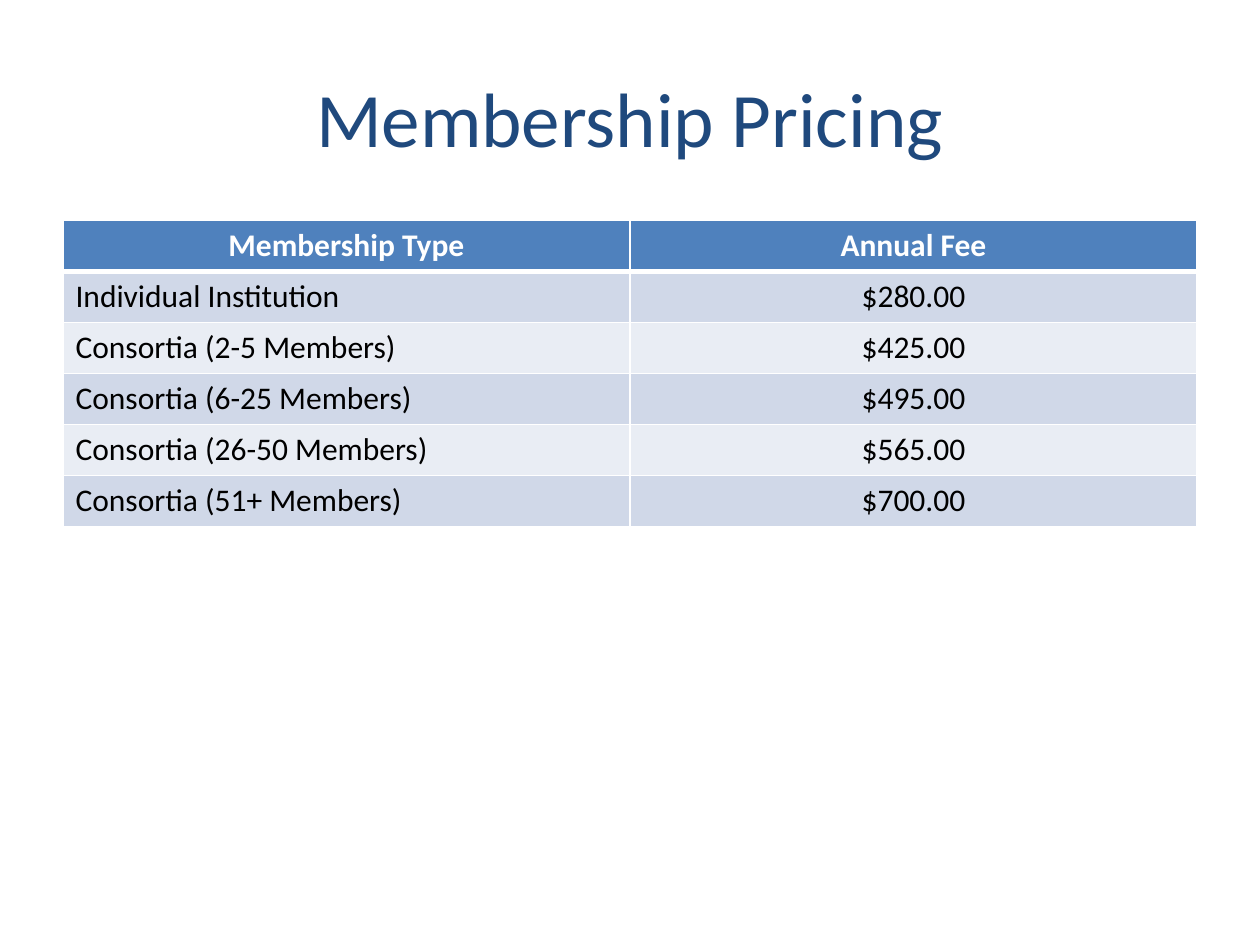
"""Build the membership pricing slide."""
from dataclasses import dataclass

from lxml import etree
from pptx import Presentation
from pptx.dml.color import RGBColor
from pptx.enum.text import MSO_ANCHOR, PP_ALIGN
from pptx.oxml.ns import qn
from pptx.util import Inches, Pt

LEFT, CENTER = PP_ALIGN.LEFT, PP_ALIGN.CENTER
MIDDLE = MSO_ANCHOR.MIDDLE

HEADERS = ("Membership Type", "Annual Fee")
FEES = (
    ("Individual Institution", "$280.00"),
    ("Consortia (2-5 Members)", "$425.00"),
    ("Consortia (6-25 Members)", "$495.00"),
    ("Consortia (26-50 Members)", "$565.00"),
    ("Consortia (51+ Members)", "$700.00"),
)


@dataclass(frozen=True)
class Theme:
    font: str = "Calibri"
    title_size: int = 44
    table_size: int = 18
    title: str = "1F497D"
    header: str = "4F81BD"
    bands: tuple = ("D0D8E8", "E9EDF4")
    white: str = "FFFFFF"
    text: str = "000000"
    thin: int = 1
    thick: int = 3


def write(frame, text, *, font, size, color, bold=False, align=LEFT):
    para = frame.paragraphs[0]
    para.alignment = align
    span = para.add_run()
    span.text = text
    span.font.name = font
    span.font.size = Pt(size)
    span.font.bold = bold
    span.font.color.rgb = RGBColor.from_string(color)


def add_border(cell, side, color, width):
    properties = cell._tc.get_or_add_tcPr()
    line = etree.SubElement(properties, qn(f"a:ln{side}"), w=str(Pt(width)))
    fill = etree.SubElement(line, qn("a:solidFill"))
    etree.SubElement(fill, qn("a:srgbClr"), val=color)


class SlideBuilder:
    def __init__(self, page, theme):
        self.page = page
        self.theme = theme

    def title(self, text, left, top, width, height):
        theme = self.theme
        box = self.page.shapes.add_textbox(
            Inches(left), Inches(top), Inches(width), Inches(height))
        frame = box.text_frame
        frame.word_wrap = True
        frame.vertical_anchor = MIDDLE
        write(frame, text, font=theme.font, size=theme.title_size,
              color=theme.title, align=CENTER)

    def table(self, headers, records, left, top, width, height):
        rows = (headers, *records)
        table = self.page.shapes.add_table(
            len(rows), len(headers), Inches(left), Inches(top),
            Inches(width), Inches(height)).table
        for row, values in enumerate(rows):
            for column, value in enumerate(values):
                self.cell(table.cell(row, column), value, row, column)

    def cell(self, cell, text, row, column):
        theme = self.theme
        is_header = row == 0
        widths = {
            "L": theme.thin,
            "R": theme.thin,
            "T": theme.thick if row == 1 else theme.thin,
            "B": theme.thick if is_header else theme.thin,
        }
        for side, width in widths.items():
            add_border(cell, side, theme.white, width)
        band = theme.bands[(row - 1) % len(theme.bands)]
        cell.fill.solid()
        cell.fill.fore_color.rgb = RGBColor.from_string(
            theme.header if is_header else band)
        write(cell.text_frame, text, font=theme.font, size=theme.table_size,
              color=theme.white if is_header else theme.text, bold=is_header,
              align=CENTER if is_header or column else LEFT)


def main():
    deck = Presentation()
    deck.slide_width, deck.slide_height = Inches(10), Inches(7.5)
    page = deck.slides.add_slide(deck.slide_layouts[6])
    builder = SlideBuilder(page, Theme())
    builder.title("Membership Pricing", 0.5, 0.3, 9, 1.25)
    builder.table(HEADERS, FEES, 0.5, 1.75, 9, 2.43)
    deck.save("out.pptx")


if __name__ == "__main__":
    main()
